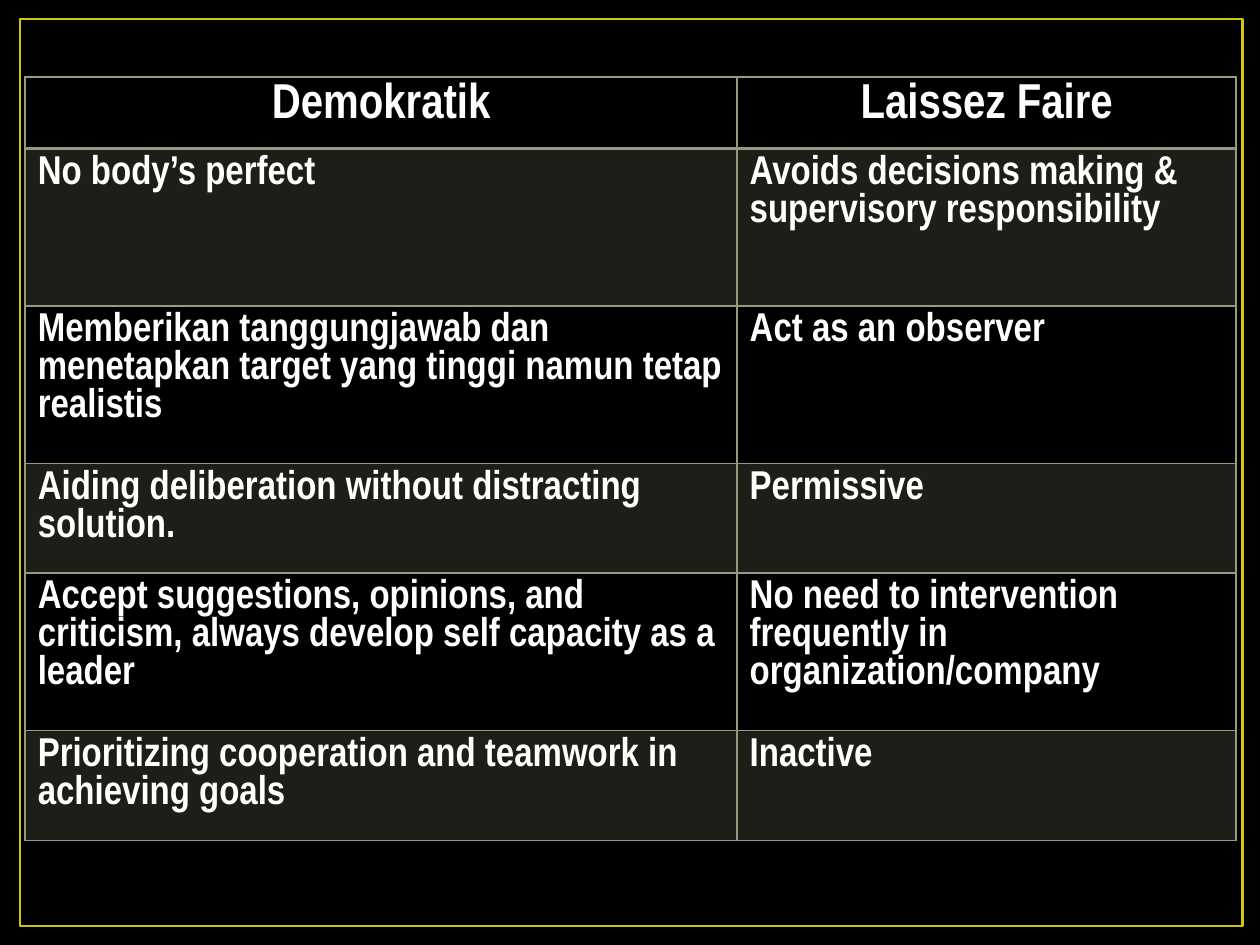
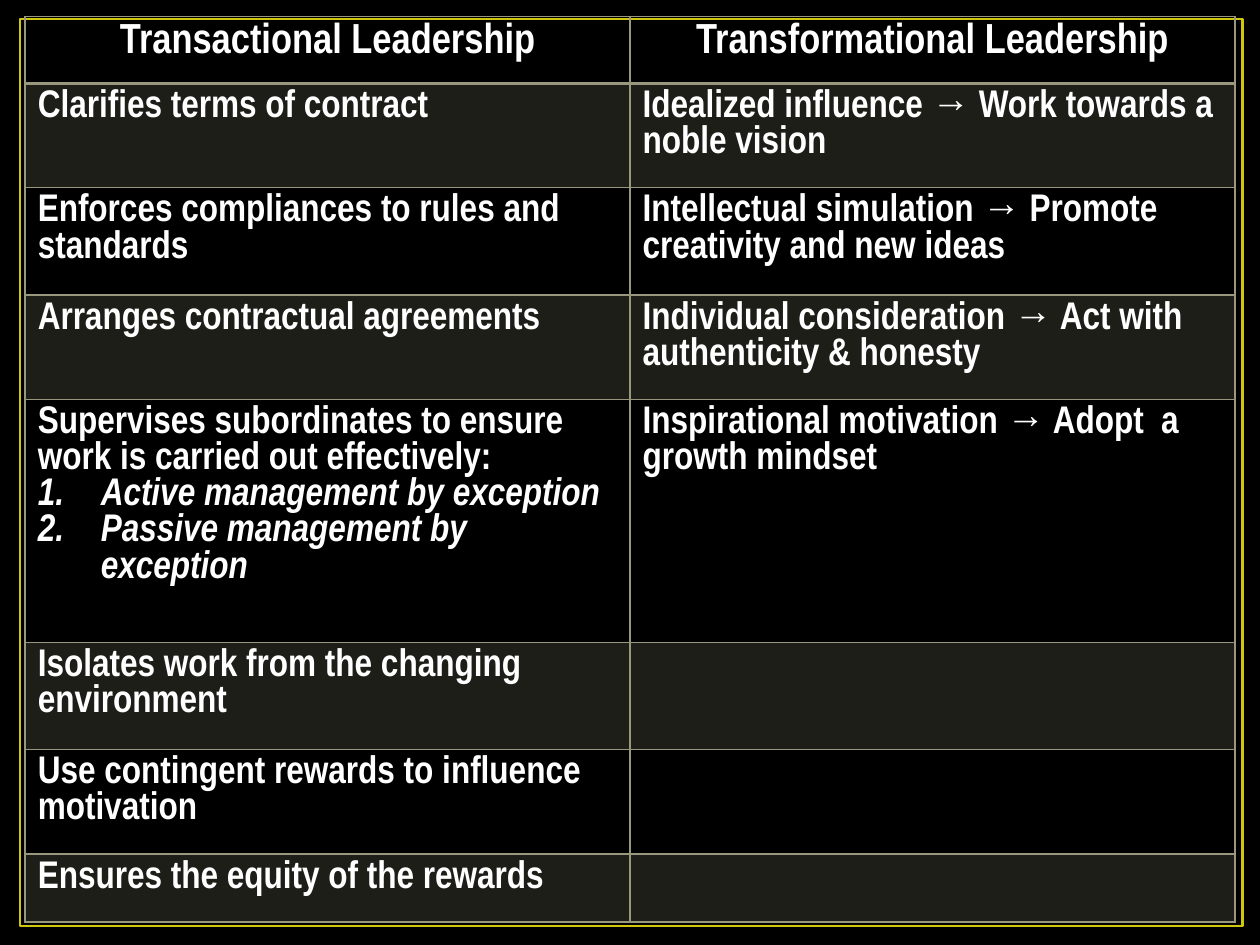
from dataclasses import dataclass

import pptx
import pptx.dml.color
import pptx.enum.shapes
import pptx.enum.text
import pptx.oxml.ns
import pptx.slide
import pptx.table
import pptx.text.text
import pptx.util
from lxml import etree

Inches = pptx.util.Inches
Pt = pptx.util.Pt
qn = pptx.oxml.ns.qn

BLACK = pptx.dml.color.RGBColor(0x00, 0x00, 0x00)
WHITE = pptx.dml.color.RGBColor(0xFF, 0xFF, 0xFF)
FRAME_YELLOW = pptx.dml.color.RGBColor(0xCF, 0xC6, 0x0D)
GRID_OLIVE = pptx.dml.color.RGBColor(0x99, 0x98, 0x7F)
BAND_OPACITY = 20
FONT = "Arial Narrow"


@dataclass(frozen=True)
class Entry:
    text: str
    steps: tuple[str, ...] = ()


@dataclass(frozen=True)
class Comparison:
    top: float
    column_widths: tuple[float, ...]
    row_heights: tuple[float, ...]
    heading_size: int
    body_size: int
    rows: tuple[tuple[Entry, ...], ...]


COMPARISONS = (
    Comparison(
        top=0.61,
        column_widths=(5.65, 3.96),
        row_heights=(0.57, 1.25, 1.25, 0.87, 1.25, 0.87),
        heading_size=28,
        body_size=23,
        rows=(
            (Entry("Demokratik"), Entry("Laissez Faire")),
            (Entry("No body’s perfect"),
             Entry("Avoids decisions making & supervisory responsibility")),
            (Entry("Memberikan tanggungjawab dan menetapkan target yang tinggi "
                   "namun tetap realistis"),
             Entry("Act as an observer")),
            (Entry("Aiding deliberation without distracting solution."),
             Entry("Permissive")),
            (Entry("Accept suggestions, opinions, and criticism, always develop "
                   "self capacity as a leader"),
             Entry("No need to intervention frequently in organization/company")),
            (Entry("Prioritizing cooperation and teamwork in achieving goals"),
             Entry("Inactive")),
        ),
    ),
    Comparison(
        top=0.13,
        column_widths=(4.8, 4.8),
        row_heights=(0.53, 0.83, 0.85, 0.83, 1.93, 0.85, 0.83, 0.54),
        heading_size=24,
        body_size=22,
        rows=(
            (Entry("Transactional Leadership"), Entry("Transformational Leadership")),
            (Entry("Clarifies terms of contract"),
             Entry("Idealized influence → Work towards a noble vision")),
            (Entry("Enforces compliances to rules and standards"),
             Entry("Intellectual simulation → Promote creativity and new ideas")),
            (Entry("Arranges contractual agreements"),
             Entry("Individual consideration → Act with authenticity & honesty")),
            (Entry("Supervises subordinates to ensure work is carried out effectively:",
                   ("Active management by exception",
                    "Passive management by exception")),
             Entry("Inspirational motivation → Adopt  a growth mindset")),
            (Entry("Isolates work from the changing environment"), Entry("")),
            (Entry("Use contingent rewards to influence motivation"), Entry("")),
            (Entry("Ensures the equity of the rewards"), Entry("")),
        ),
    ),
)


def draw_frame(slide: pptx.slide.Slide) -> None:
    frame = slide.shapes.add_shape(
        pptx.enum.shapes.MSO_SHAPE.RECTANGLE,
        Inches(0.16), Inches(0.15), Inches(9.7), Inches(7.2))
    frame.shadow.inherit = False
    frame.fill.background()
    frame.line.color.rgb = FRAME_YELLOW
    frame.line.width = Pt(1.5)


def write(paragraph: pptx.text.text._Paragraph, text: str, size: int,
          italic: bool = False) -> None:
    run = paragraph.add_run()
    run.text = text
    formats = {"name": FONT, "size": Pt(size), "bold": True, "italic": italic}
    for attribute, value in formats.items():
        setattr(run.font, attribute, value)
    run.font.color.rgb = WHITE


def number(paragraph: pptx.text.text._Paragraph) -> None:
    properties = paragraph._p.get_or_add_pPr()
    properties.set("marL", str(Inches(0.5)))
    properties.set("indent", str(-Inches(0.5)))
    etree.SubElement(properties, qn("a:buFont"), typeface="+mj-lt")
    etree.SubElement(properties, qn("a:buAutoNum"), type="arabicPeriod")


def draw_borders(cell: pptx.table._Cell, row: int) -> None:
    widths = {"lnL": 1, "lnR": 1, "lnT": 2 if row == 1 else 1, "lnB": 2 if row == 0 else 1}
    properties = cell._tc.get_or_add_tcPr()
    for side, width in widths.items():
        border = etree.SubElement(properties, qn(f"a:{side}"), w=str(Pt(width)))
        paint = etree.SubElement(border, qn("a:solidFill"))
        etree.SubElement(paint, qn("a:srgbClr"), val=str(GRID_OLIVE))


def fill_band(cell: pptx.table._Cell, row: int) -> None:
    if row % 2 == 0:
        cell.fill.background()
        return
    cell.fill.solid()
    cell.fill.fore_color.rgb = GRID_OLIVE
    color = cell._tc.tcPr.find(f"{qn('a:solidFill')}/{qn('a:srgbClr')}")
    etree.SubElement(color, qn("a:alpha"), val=str(BAND_OPACITY * 1000))


def fill_cell(cell: pptx.table._Cell, entry: Entry, row: int,
              comparison: Comparison) -> None:
    draw_borders(cell, row)
    fill_band(cell, row)
    if not entry.text:
        return
    heading = row == 0
    lead = cell.text_frame.paragraphs[0]
    if heading:
        lead.alignment = pptx.enum.text.PP_ALIGN.CENTER
    write(lead, entry.text, comparison.heading_size if heading else comparison.body_size)
    for step in entry.steps:
        paragraph = cell.text_frame.add_paragraph()
        number(paragraph)
        write(paragraph, step, comparison.body_size, italic=True)


def draw_comparison(slide: pptx.slide.Slide, comparison: Comparison) -> None:
    table = slide.shapes.add_table(
        len(comparison.row_heights), len(comparison.column_widths),
        Inches(0.2), Inches(comparison.top),
        Inches(sum(comparison.column_widths)),
        Inches(sum(comparison.row_heights))).table
    table.first_row = False
    table.horz_banding = False
    for column, width in zip(table.columns, comparison.column_widths):
        column.width = Inches(width)
    for table_row, height in zip(table.rows, comparison.row_heights):
        table_row.height = Inches(height)
    for row, entries in enumerate(comparison.rows):
        for column, entry in enumerate(entries):
            fill_cell(table.cell(row, column), entry, row, comparison)


def main() -> None:
    presentation = pptx.Presentation()
    presentation.slide_width = Inches(10)
    presentation.slide_height = Inches(7.5)
    for comparison in COMPARISONS:
        slide = presentation.slides.add_slide(presentation.slide_layouts[6])
        slide.background.fill.solid()
        slide.background.fill.fore_color.rgb = BLACK
        draw_frame(slide)
        draw_comparison(slide, comparison)
    presentation.save("out.pptx")


if __name__ == "__main__":
    main()
